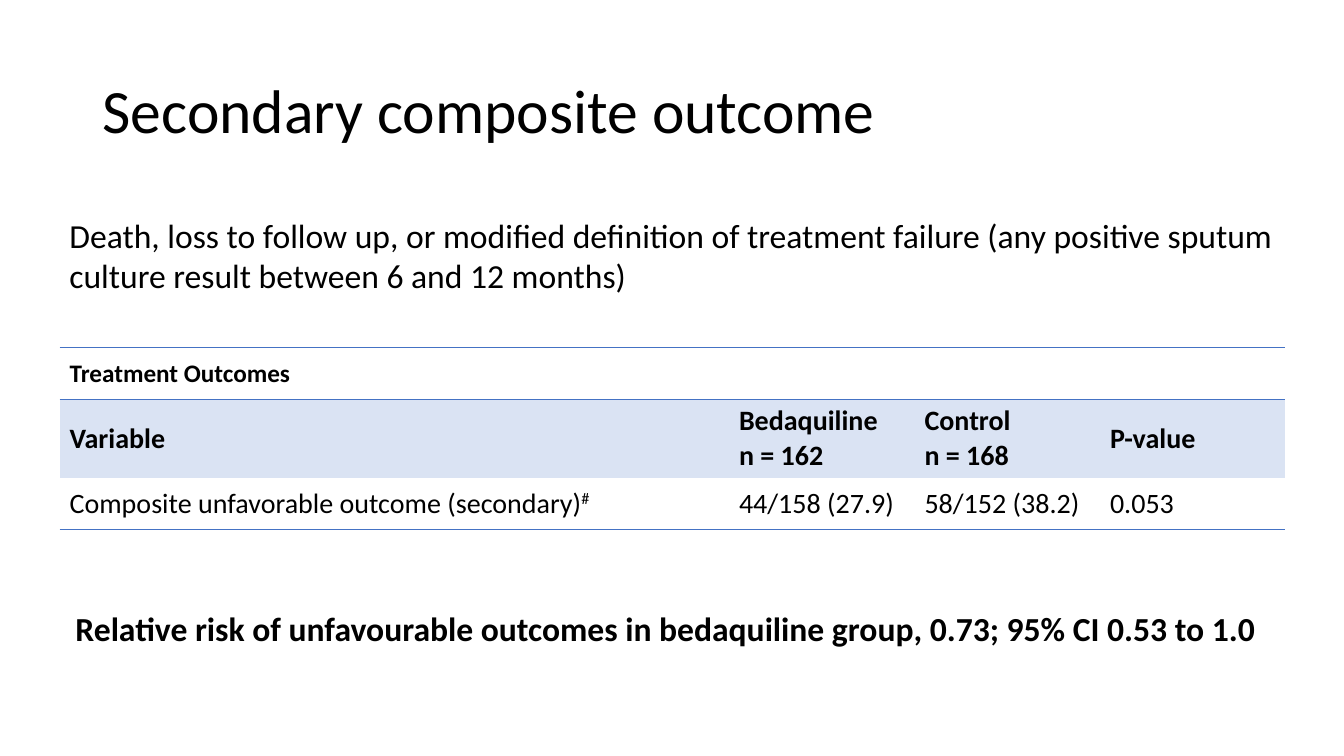
from pptx import Presentation
from pptx.dml.color import RGBColor as RGB
from pptx.enum.text import MSO_ANCHOR as Anchor, PP_ALIGN as Align
from pptx.oxml import parse_xml
from pptx.oxml.ns import nsdecls
from pptx.util import Inches, Pt

BLACK = RGB(0x00, 0x00, 0x00)
WHITE = RGB(0xFF, 0xFF, 0xFF)
BLUE = RGB(0x44, 0x72, 0xC4)
PALE = RGB(0xDA, 0xE3, 0xF3)

WIDTHS = (6.64, 1.84, 1.84, 1.84)
HEIGHTS = (0.51, 0.78, 0.51)
RULES = (0, 1, 3)
ROWS = (
    (18, True, WHITE, ("Treatment Outcomes", "", "", "")),
    (20, True, PALE, ("Variable", "Bedaquiline\nn = 162", "Control\nn = 168", "P-value")),
    (20, False, WHITE, ("Composite unfavorable outcome (secondary)^#",
                        "44/158 (27.9)", "58/152 (38.2)", "0.053")),
)


class Deck:
    """Hold the slide and its style, and draw text and tables on it."""

    def __init__(self, slide, font):
        self.slide = slide
        self.font = font

    def fill(self, frame, text, size, bold=False, align=Align.LEFT, gap=1.0):
        for i, line in enumerate(text.split("\n")):
            para = frame.add_paragraph() if i else frame.paragraphs[0]
            para.alignment = align
            para.line_spacing = gap
            base, _, mark = line.partition("^")
            for part in filter(None, (base, mark)):
                run = para.add_run()
                run.text = part
                style = {"name": self.font, "size": Pt(size), "bold": bold}
                for key, value in style.items():
                    setattr(run.font, key, value)
                run.font.color.rgb = BLACK
                if part == mark:
                    run.font._element.set("baseline", "30000")

    def text(self, box, text, size, anchor=Anchor.TOP, **style):
        frame = self.slide.shapes.add_textbox(*map(Inches, box)).text_frame
        frame.word_wrap = True
        frame.vertical_anchor = anchor
        self.fill(frame, text, size, **style)

    def edge(self, cell, row):
        ruled = {"L": False, "R": False, "T": row in RULES, "B": row + 1 in RULES}
        for i, (side, on) in enumerate(ruled.items()):
            fill = (f'<a:solidFill><a:srgbClr val="{BLUE}"/></a:solidFill>'
                    if on else "<a:noFill/>")
            line = f'<a:ln{side} {nsdecls("a")} w="{Pt(1)}">{fill}</a:ln{side}>'
            cell._tc.get_or_add_tcPr().insert(i, parse_xml(line))

    def table(self, left, top):
        size = map(Inches, (left, top, sum(WIDTHS), sum(HEIGHTS)))
        grid = self.slide.shapes.add_table(len(ROWS), len(WIDTHS), *size).table
        grid.first_row = grid.horz_banding = False
        for col, width in zip(grid.columns, WIDTHS):
            col.width = Inches(width)
        for row, height in zip(grid.rows, HEIGHTS):
            row.height = Inches(height)
        grid.cell(0, 0).merge(grid.cell(0, 2))
        for r, (points, bold, shade, texts) in enumerate(ROWS):
            for c, text in enumerate(texts):
                cell = grid.cell(r, c)
                cell.fill.solid()
                cell.fill.fore_color.rgb = shade
                cell.vertical_anchor = Anchor.MIDDLE
                self.edge(cell, r)
                self.fill(cell.text_frame, text, points, bold)


def main():
    show = Presentation()
    show.slide_width, show.slide_height = Inches(13.33), Inches(7.5)
    deck = Deck(show.slides.add_slide(show.slide_layouts[6]), "Calibri")
    deck.table(0.59, 3.45)
    deck.text((0.92, 0.4, 11.5, 1.45), "Secondary composite outcome", 44,
              anchor=Anchor.MIDDLE, gap=0.9)
    deck.text((0.59, 5.98, 12.02, 0.5),
              "Relative risk of unfavourable outcomes in bedaquiline group, "
              "0.73; 95% CI 0.53 to 1.0", 24, bold=True, align=Align.CENTER)
    deck.text((0.59, 2.08, 12.15, 0.91),
              "Death, loss to follow up, or modified definition of treatment failure "
              "(any positive sputum culture result between 6 and 12 months)", 24)
    show.save("out.pptx")


if __name__ == "__main__":
    main()
